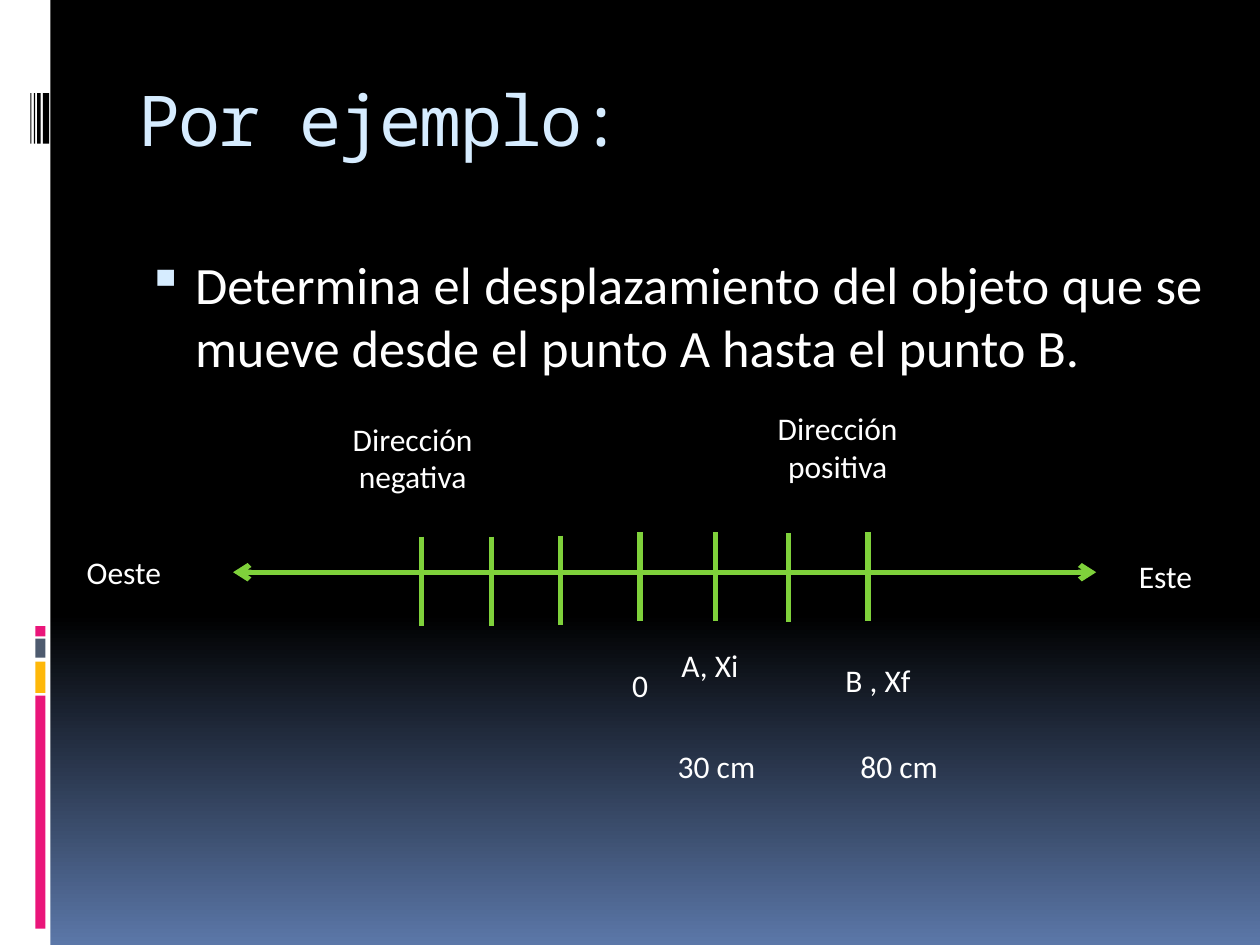
from lxml import etree
from pptx import Presentation, util as u
from pptx.dml import color
from pptx.enum import shapes, text
from pptx.oxml import ns

Pt = u.Pt
GREEN, WHITE, PALE, BLACK = "7FD13B", "FFFFFF", "D6ECFF", "000000"
PINK, GOLD, SLATE = "EA157A", "FEB80A", "4E5B6F"


def paint(fmt, code):
    """Set a fill or a font colour from a hex string."""
    if hasattr(fmt, "solid"):
        fmt.solid()
        fmt = fmt.fore_color
    fmt.rgb = color.RGBColor.from_string(code)


def apply(obj, values):
    for name, value in values.items():
        setattr(obj, name, value)


def add(parent, tag, **attrs):
    return etree.SubElement(parent, ns.qn(tag), **attrs)


class Deck:
    font = {"name": "Calibri", "size": Pt(18)}
    frame = {"word_wrap": True, "vertical_anchor": text.MSO_ANCHOR.TOP}

    def __init__(self, wide, high):
        self.prs = Presentation()
        apply(self.prs, {"slide_width": Pt(wide), "slide_height": Pt(high)})
        self.slide = self.prs.slides.add_slide(self.prs.slide_layouts[6])

    def fade(self, *stops):
        """Fill the background with a downward gradient."""
        fill = self.slide.background.fill
        fill.gradient()
        fill.gradient_angle = 270
        for stop, (pos, code) in zip(fill.gradient_stops, stops):
            stop.position = pos
            paint(stop.color, code)

    def rect(self, x, y, w, h, code):
        box = self.slide.shapes.add_shape(
            shapes.MSO_SHAPE.RECTANGLE, Pt(x), Pt(y), Pt(w), Pt(h))
        box.shadow.inherit = False
        paint(box.fill, code)
        box.line.fill.background()

    def line(self, x1, y1, x2, y2, arrows=False):
        link = self.slide.shapes.add_connector(
            shapes.MSO_CONNECTOR.STRAIGHT, Pt(x1), Pt(y1), Pt(x2), Pt(y2))
        link.line.width = Pt(3)
        paint(link.line.fill, GREEN)
        if arrows:
            for end in ("a:headEnd", "a:tailEnd"):
                add(link.line._get_or_add_ln(), end, type="arrow")
        add(link._element.spPr, "a:effectLst")

    def text(self, x, y, w, h, words, code=WHITE, align=text.PP_ALIGN.LEFT, **font):
        box = self.slide.shapes.add_textbox(Pt(x), Pt(y), Pt(w), Pt(h))
        apply(box.text_frame, self.frame)
        para = box.text_frame.paragraphs[0]
        para.alignment = align
        run = para.add_run()
        run.text = words
        apply(run.font, {**self.font, **font})
        paint(run.font.fill, code)
        return para

    def bullet(self, para, mark, code, left, hang):
        para.space_before = Pt(7)
        props = para._p.get_or_add_pPr()
        props.set("marL", str(Pt(left)))
        props.set("indent", str(-Pt(hang)))
        add(add(props, "a:buClr"), "a:srgbClr", val=code)
        add(props, "a:buSzPct", val="95000")
        add(props, "a:buChar", char=mark)


def main():
    deck = Deck(720, 540)
    deck.fade((0.65, BLACK), (1, "5B77A8"))

    deck.rect(0, 0, 28.8, 540, WHITE)
    for y, h, code in ((397.5, 133.2, PINK), (378, 18, GOLD),
                       (365, 10.8, SLATE), (357.8, 5.8, PINK)):
        deck.rect(20.2, y, 5.8, h, code)
    for x, w in ((24.5, 3.6), (21.2, 2), (19.4, 0.7), (17.3, 0.7)):
        deck.rect(x, 53.3, w, 28.8, BLACK)

    title = deck.text(72, 40.3, 612, 72, "Por ejemplo:", PALE,
                      name="Noto Sans Mono", size=Pt(40))
    title.runs[0]._r.get_or_add_rPr().set("spc", "-100")
    task = deck.text(72, 140.4, 622.8, 360,
                     "Determina el desplazamiento del objeto que se mueve "
                     "desde el punto A hasta el punto B.",
                     align=text.PP_ALIGN.JUSTIFY, size=Pt(30))
    deck.bullet(task, "▪", PALE, 32.4, 27.4)

    deck.line(133.2, 327, 626.4, 327, arrows=True)
    for x, y in ((241, 306.7), (281, 306.7), (320.4, 306), (365.8, 304),
                 (409, 304), (450.7, 304.5), (496, 304)):
        deck.line(x, y, x, y + 51)

    for x, y, w, words in (
            (42.5, 312.5, 102, "Oeste"), (643.7, 314.6, 102, "Este"),
            (354.2, 377.3, 39.6, "0"),
            (382.3, 365.8, 54, "A, Xi"), (476, 374.4, 54, "B , Xf"),
            (380.2, 423.4, 67.7, "30 cm"), (484.6, 423.4, 67.7, "80 cm")):
        deck.text(x, y, w, 29, words)
    for x, y, w, words in ((167.8, 236.2, 136, "Dirección negativa"),
                           (427.7, 230.4, 102, "Dirección positiva")):
        deck.text(x, y, w, 51, words, align=text.PP_ALIGN.CENTER)

    deck.prs.save("out.pptx")


if __name__ == "__main__":
    main()
